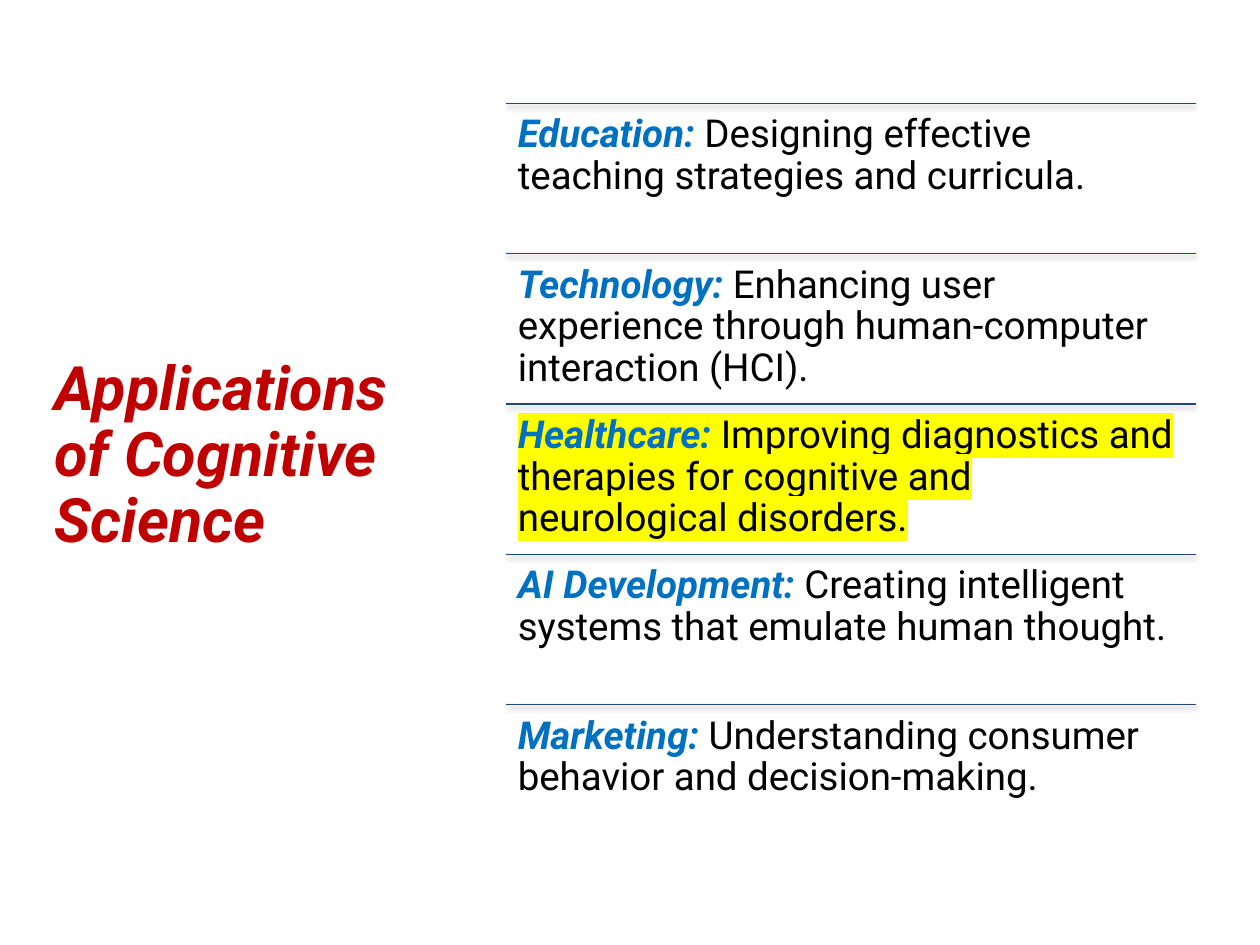
"""Build the slide on applications of cognitive science."""
import pptx
import pptx.dml.color
import pptx.enum.shapes
import pptx.enum.text
import pptx.oxml
import pptx.oxml.ns
import pptx.util

Inches = pptx.util.Inches
COLORS = {"title": "C00000", "term": "0070C0", "text": "000000",
          "rule": "1F497D", "highlight": "FFFF00", "shadow": "000000"}
NS = pptx.oxml.ns.nsdecls("a")
SHADOW = (f'<a:effectLst {NS}><a:outerShdw blurRad="40000" dist="23000" dir="5400000" rotWithShape="0">'
          f'<a:srgbClr val="{COLORS["shadow"]}"><a:alpha val="35000"/></a:srgbClr>'
          '</a:outerShdw></a:effectLst>')
HIGHLIGHT = f'<a:highlight {NS}><a:srgbClr val="{COLORS["highlight"]}"/></a:highlight>'


def add_run(p, text, size=22, color="text", strong=False, marked=False):
    r = p.add_run()
    r.text = text
    r.font.size = pptx.util.Pt(size)
    r.font.name = "Roboto"
    r.font.bold = r.font.italic = strong
    r.font.color.rgb = pptx.dml.color.RGBColor.from_string(COLORS[color])
    if marked:
        fill = r.font._element.find(pptx.oxml.ns.qn("a:solidFill"))
        fill.addnext(pptx.oxml.parse_xml(HIGHLIGHT))


prs = pptx.Presentation()
prs.slide_width, prs.slide_height = Inches(10), Inches(7.5)
s = prs.slides.add_slide(prs.slide_layouts[5])

title = s.shapes.title
title.left, title.top, title.width, title.height = map(Inches, (0.33, 1.84, 3.33, 2.62))
tf = title.text_frame
tf.word_wrap = True
tf.auto_size = pptx.enum.text.MSO_AUTO_SIZE.NONE
tf.vertical_anchor = pptx.enum.text.MSO_ANCHOR.BOTTOM
p = tf.paragraphs[0]
p.alignment = pptx.enum.text.PP_ALIGN.LEFT
p.line_spacing = 0.9
p.space_after = pptx.util.Pt(6)
add_run(p, "Applications of Cognitive Science", size=35, color="title", strong=True)

applications = [
    ("Education:", "Designing effective teaching strategies and curricula."),
    ("Technology:", "Enhancing user experience through human-computer interaction (HCI)."),
    ("Healthcare:", "Improving diagnostics and therapies for cognitive and neurological disorders."),
    ("AI Development:", "Creating intelligent systems that emulate human thought."),
    ("Marketing:", "Understanding consumer behavior and decision-making."),
]
left, top, width, row_height = Inches(4.02), Inches(0.82), Inches(5.47), Inches(1.193)

for i, (term, text) in enumerate(applications):
    y = top + i * row_height
    rule = s.shapes.add_connector(pptx.enum.shapes.MSO_CONNECTOR.STRAIGHT, left, y, left + width, y)
    rule.line.color.rgb = pptx.dml.color.RGBColor.from_string(COLORS["rule"])
    rule.line.width = pptx.util.Pt(0.75)
    rule._element.spPr.append(pptx.oxml.parse_xml(SHADOW))

    tf = s.shapes.add_textbox(left, y, width, row_height).text_frame
    tf.word_wrap = True
    tf.margin_left = tf.margin_right = tf.margin_top = tf.margin_bottom = Inches(0.09)
    p = tf.paragraphs[0]
    p.line_spacing = 0.9
    marked = term == "Healthcare:"
    add_run(p, term, color="term", strong=True, marked=marked)
    add_run(p, " " + text, marked=marked)

prs.save("out.pptx")
